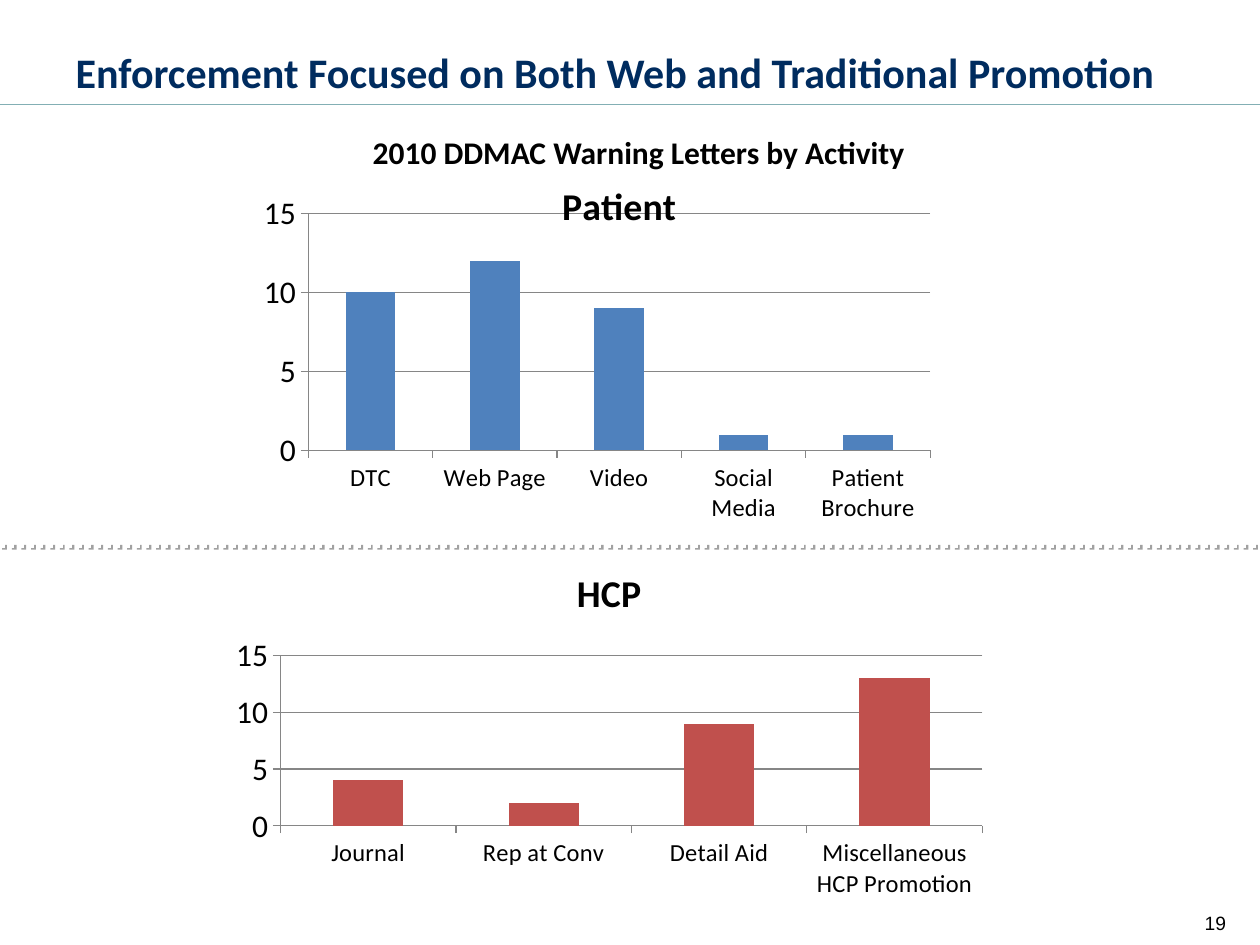
from lxml import etree
from pptx import Presentation
from pptx.chart.data import CategoryChartData
from pptx.dml.color import RGBColor
from pptx.enum.chart import XL_CHART_TYPE, XL_TICK_MARK
from pptx.enum.dml import MSO_LINE
from pptx.enum.shapes import MSO_CONNECTOR
from pptx.enum.text import MSO_ANCHOR, MSO_AUTO_SIZE, PP_ALIGN
from pptx.oxml import parse_xml
from pptx.oxml.ns import nsdecls, qn
from pptx.util import Inches, Pt

COLUMNS = XL_CHART_TYPE.COLUMN_CLUSTERED
TICK_OUT = XL_TICK_MARK.OUTSIDE
TICK_NONE = XL_TICK_MARK.NONE
STRAIGHT = MSO_CONNECTOR.STRAIGHT
ROUND_DOT = MSO_LINE.ROUND_DOT
MIDDLE = MSO_ANCHOR.MIDDLE
LEFT, RIGHT = PP_ALIGN.LEFT, PP_ALIGN.RIGHT
NO_FIT, GROW = MSO_AUTO_SIZE.NONE, MSO_AUTO_SIZE.SHAPE_TO_FIT_TEXT

TITLE_ONLY = 5
BODY_FONT = "Calibri"
COLORS = {
    "title": "002C5F",
    "text": "000000",
    "rule": "83AFB4",
    "divider": "FFFFFF",
    "shadow": "0D0D0D",
    "axis": "868686",
    "patient": "4F81BD",
    "hcp": "C0504D",
}


def rgb(name):
    return RGBColor.from_string(COLORS[name])


def style_font(font, size, color="text", bold=False, name=BODY_FONT):
    font.name = name
    font.size = Pt(size)
    font.bold = bold
    font.color.rgb = rgb(color)


def write_line(frame, text, align, size, **style):
    para = frame.paragraphs[0]
    para.alignment = align
    span = para.add_run()
    span.text = text
    style_font(span.font, size, **style)


def place(shape, left, top, width, height):
    shape.left, shape.top = Inches(left), Inches(top)
    shape.width, shape.height = Inches(width), Inches(height)


def add_title(page, text):
    title = page.shapes.title
    place(title, 0.5, 0.3, 9, 0.53)
    frame = title.text_frame
    frame.auto_size = NO_FIT
    frame.vertical_anchor = MIDDLE
    write_line(frame, text, LEFT, 24, color="title", bold=True)


def add_label(page, bounds, text, align, size, wrap=True, **style):
    box = page.shapes.add_textbox(*map(Inches, bounds))
    box.text_frame.word_wrap = wrap
    box.text_frame.auto_size = NO_FIT if wrap else GROW
    write_line(box.text_frame, text, align, size, **style)


def add_full_width_line(page, top, color, weight):
    """Draw a line across the slide; return it with its empty effect list."""
    line = page.shapes.add_connector(
        STRAIGHT, Inches(0), Inches(top), Inches(10), Inches(top))
    line.line.color.rgb = rgb(color)
    line.line.width = Pt(weight)
    effects = etree.SubElement(line._element.spPr, qn("a:effectLst"))
    return line, effects


def add_dotted_divider(page, top):
    divider, effects = add_full_width_line(page, top, "divider", 2.75)
    divider.line.dash_style = ROUND_DOT
    effects.append(parse_xml(
        f'<a:outerShdw {nsdecls("a")} blurRad="0" dist="{Pt(1.6)}" '
        f'dir="{39 * 60000}" algn="tl" rotWithShape="0">'
        f'<a:srgbClr val="{COLORS["shadow"]}"><a:alpha val="38000"/></a:srgbClr>'
        '</a:outerShdw>'))


def set_inner_plot(chart, left, top, width, height):
    """Fix the plot area, in fractions of the chart's size."""
    plot_area = chart._chartSpace.chart.plotArea
    for old in plot_area.findall(qn("c:layout")):
        plot_area.remove(old)
    plot_area.insert(0, parse_xml(
        f'<c:layout {nsdecls("c")}><c:manualLayout><c:layoutTarget val="inner"/>'
        '<c:xMode val="edge"/><c:yMode val="edge"/>'
        f'<c:x val="{left}"/><c:y val="{top}"/><c:w val="{width}"/><c:h val="{height}"/>'
        '</c:manualLayout></c:layout>'))


def style_axis(axis, size):
    axis.major_tick_mark = TICK_OUT
    axis.minor_tick_mark = TICK_NONE
    axis.format.line.color.rgb = rgb("axis")
    style_font(axis.tick_labels.font, size)


def add_column_chart(page, bounds, name, counts, color):
    data = CategoryChartData()
    data.categories = list(counts)
    data.add_series(name, list(counts.values()))
    chart = page.shapes.add_chart(COLUMNS, *map(Inches, bounds), data).chart
    style_font(chart.font, 18)
    chart.has_legend = False
    chart.has_title = True
    write_line(chart.chart_title.text_frame, name, None, 21.6, bold=True)

    style_axis(chart.category_axis, 14)
    values = chart.value_axis
    style_axis(values, 18)
    values.minimum_scale, values.maximum_scale, values.major_unit = 0, 15, 5
    values.has_major_gridlines = True
    values.major_gridlines.format.line.color.rgb = rgb("axis")

    plot = chart.plots[0]
    plot.gap_width = 150
    plot.vary_by_categories = False
    fill = plot.series[0].format.fill
    fill.solid()
    fill.fore_color.rgb = rgb(color)
    return chart


def main():
    deck = Presentation()
    deck.slide_width, deck.slide_height = Inches(10), Inches(7.5)
    page = deck.slides.add_slide(deck.slide_layouts[TITLE_ONLY])

    add_full_width_line(page, 0.83, "rule", 1)
    add_label(page, (7.5, 7.18, 2.33, 0.4), "19", RIGHT, 11, name="Arial")
    add_title(page, "Enforcement Focused on Both Web and Traditional Promotion")
    add_label(page, (2.86, 1.01, 4.47, 0.4), "2010 DDMAC Warning Letters by Activity",
              LEFT, 18, wrap=False, bold=True)

    patient = add_column_chart(
        page, (1.83, 1.25, 6.17, 3.42), "Patient",
        {"DTC": 10, "Web Page": 12, "Video": 9, "Social Media": 1, "Patient Brochure": 1},
        "patient")
    set_inner_plot(patient, 0.1, 0.13, 0.8, 0.55)
    add_column_chart(
        page, (1.75, 4.33, 6.17, 2.86), "HCP",
        {"Journal": 4, "Rep at Conv": 2, "Detail Aid": 9, "Miscellaneous HCP Promotion": 13},
        "hcp")
    add_dotted_divider(page, 4.33)

    deck.save("out.pptx")


if __name__ == "__main__":
    main()
